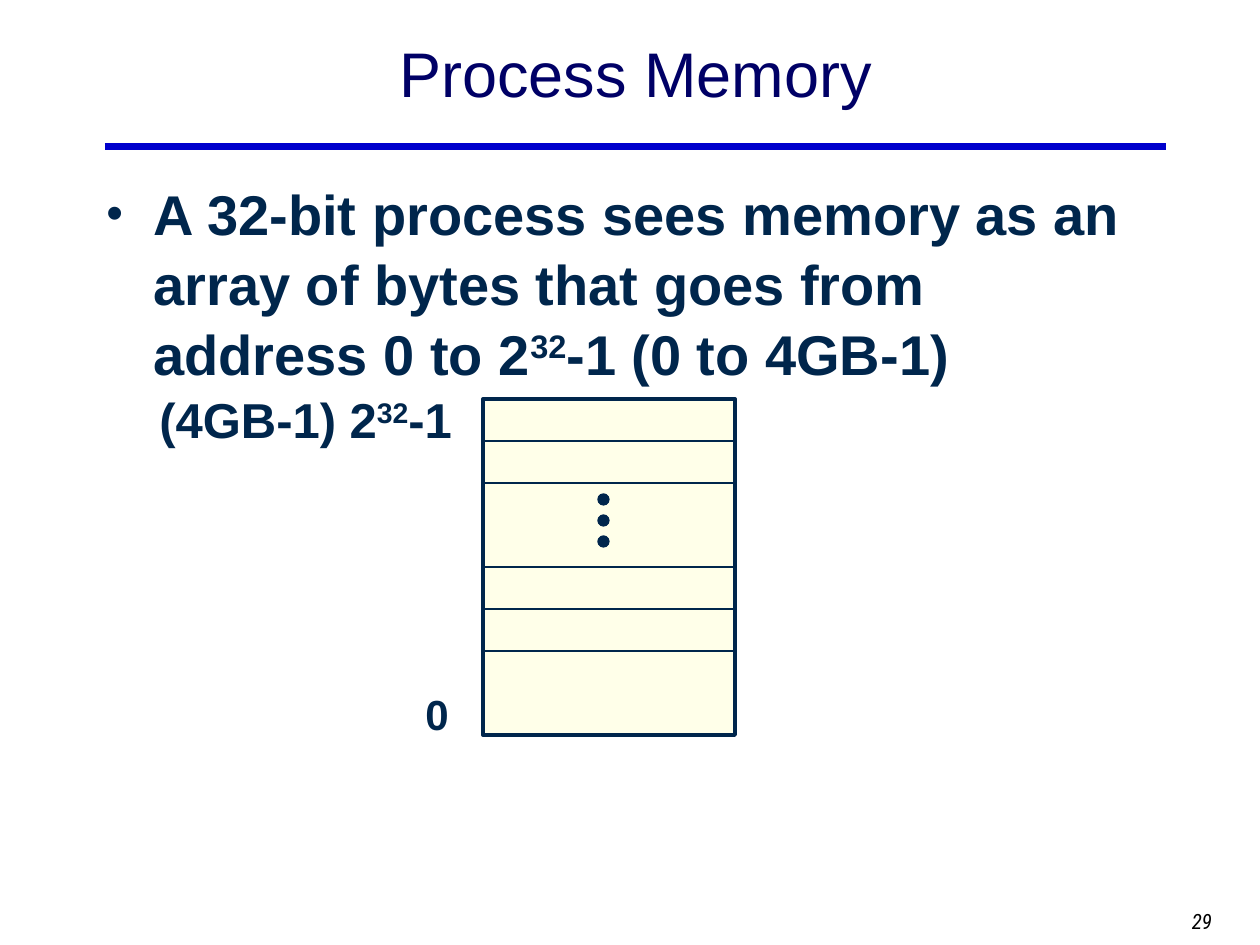
from dataclasses import dataclass

from lxml import etree
from pptx import Presentation
from pptx.dml.color import RGBColor
from pptx.enum.shapes import MSO_CONNECTOR, MSO_SHAPE
from pptx.enum.text import MSO_ANCHOR, PP_ALIGN
from pptx.oxml.ns import qn
from pptx.util import Pt

PX = 7257.14  # EMU per px, 126 px to the inch
LINE = MSO_CONNECTOR.STRAIGHT
RECT, OVAL = MSO_SHAPE.RECTANGLE, MSO_SHAPE.OVAL
TOP, BOTTOM = MSO_ANCHOR.TOP, MSO_ANCHOR.BOTTOM
LEFT, CENTER = PP_ALIGN.LEFT, PP_ALIGN.CENTER


@dataclass(frozen=True)
class Theme:
    ink: str = "00264C"
    title: str = "000066"
    rule: str = "0000CC"
    cell: str = "FFFFE9"
    black: str = "000000"
    font: str = "Arial"
    narrow: str = "Roboto Condensed"
    head: int = 36
    body: int = 32
    label: int = 28
    zero: int = 24
    page: int = 12


THEME = Theme()


def px(*vals):
    return [round(v * PX) for v in vals]


def rgb(code):
    return RGBColor.from_string(code)


def add_text(slide, box, parts, size, color=THEME.ink, font=THEME.font,
             bold=False, italic=False, align=LEFT, anchor=TOP, inset=6,
             gap=None, bullet=False):
    """Add one paragraph; every second part is a superscript."""
    frame = slide.shapes.add_textbox(*px(*box)).text_frame
    frame.word_wrap = True
    frame.vertical_anchor = anchor
    frame.margin_top = px(inset)[0]
    para = frame.paragraphs[0]
    para.alignment = align
    if gap:
        para.line_spacing = gap
    if bullet:
        add_bullet(para)
    for i, part in enumerate(parts):
        run = para.add_run()
        run.text = part
        if i % 2:
            run._r.get_or_add_rPr().set("baseline", "30000")
    face = para.font
    face.name, face.size = font, Pt(size)
    face.bold, face.italic = bold, italic
    face.color.rgb = rgb(color)


def add_bullet(para):
    props = para._p.get_or_add_pPr()
    indent = px(47)[0]
    props.set("marL", str(indent))
    props.set("indent", str(-indent))
    tint = etree.SubElement(props, qn("a:buClr"))
    etree.SubElement(tint, qn("a:srgbClr"), val=THEME.ink)
    etree.SubElement(props, qn("a:buSzPct"), val="85000")
    etree.SubElement(props, qn("a:buFont"), typeface=THEME.font)
    etree.SubElement(props, qn("a:buChar"), char="•")


def add_shape(slide, kind, box, fill, width):
    shape = slide.shapes.add_shape(kind, *px(*box))
    shape.shadow.inherit = False
    shape.fill.solid()
    shape.fill.fore_color.rgb = rgb(fill)
    shape.line.color.rgb = rgb(THEME.ink)
    shape.line.width = Pt(width)
    return shape


def add_line(slide, left, right, y, color, width):
    line = slide.shapes.add_connector(LINE, *px(left, y, right, y))
    line.line.color.rgb = rgb(color)
    line.line.width = Pt(width)
    etree.SubElement(line._element.spPr, qn("a:effectLst"))
    return line


def add_memory(slide):
    left, top, width, row, rows = 483, 399, 252, 42, 8
    block = add_shape(slide, RECT, (left, top, width, row * rows),
                      THEME.cell, 2.25)
    for i in (0, 1, 2, 4, 5, 6):
        line = add_line(slide, left, left + width, top + i * row,
                        THEME.ink, 0.75)
        if i == rows // 2:
            line.begin_connect(block, 1)
            line.end_connect(block, 3)
    for i in range(3):
        add_shape(slide, OVAL, (598, 494 + i * row // 2, 11, 11),
                  THEME.ink, 0.75)


def main():
    deck = Presentation()
    deck.slide_width, deck.slide_height = px(1260, 945)
    slide = deck.slides.add_slide(deck.slide_layouts[6])
    add_line(slide, 105, 1166, 147, THEME.rule, 4)
    add_text(slide, (105, 21, 1061, 95), ["Process Memory"], THEME.head,
             THEME.title, align=CENTER, anchor=BOTTOM)
    add_text(slide, (1092, 903, 220, 63), ["29"], THEME.page, THEME.black,
             THEME.narrow, italic=True, align=CENTER)
    strong = dict(bold=True, inset=9, gap=1.04)
    add_text(slide, (94, 168, 1071, 577),
             ["A 32-bit process sees memory as an array of bytes that goes "
              "from address 0 to 2", "32", "-1 (0 to 4GB-1)"],
             THEME.body, bullet=True, **strong)
    add_memory(slide)
    add_text(slide, (413, 678, 59, 66), ["0"], THEME.zero, **strong)
    add_text(slide, (147, 378, 336, 72), ["(4GB-1) 2", "32", "-1"],
             THEME.label, **strong)
    deck.save("out.pptx")


if __name__ == "__main__":
    main()
